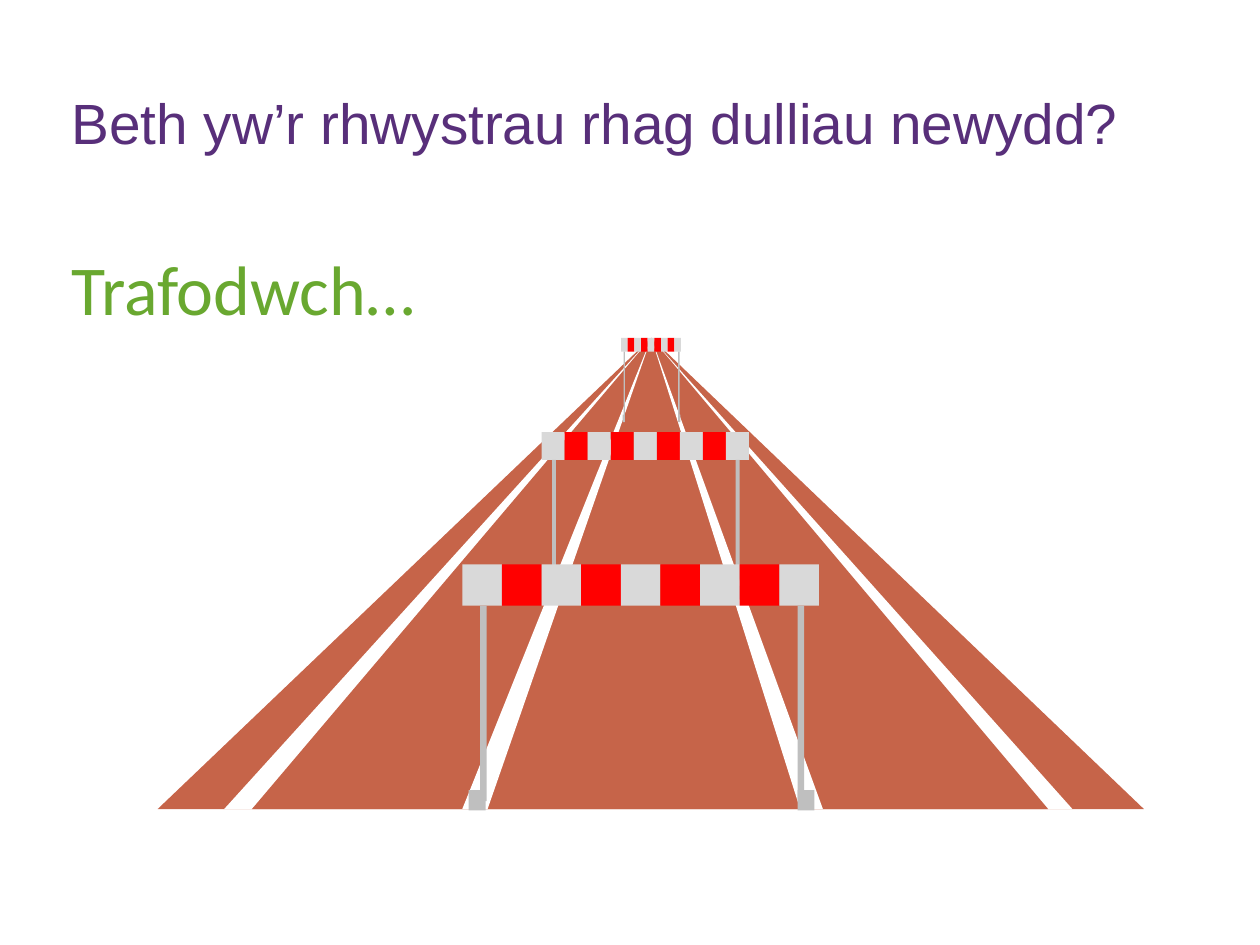
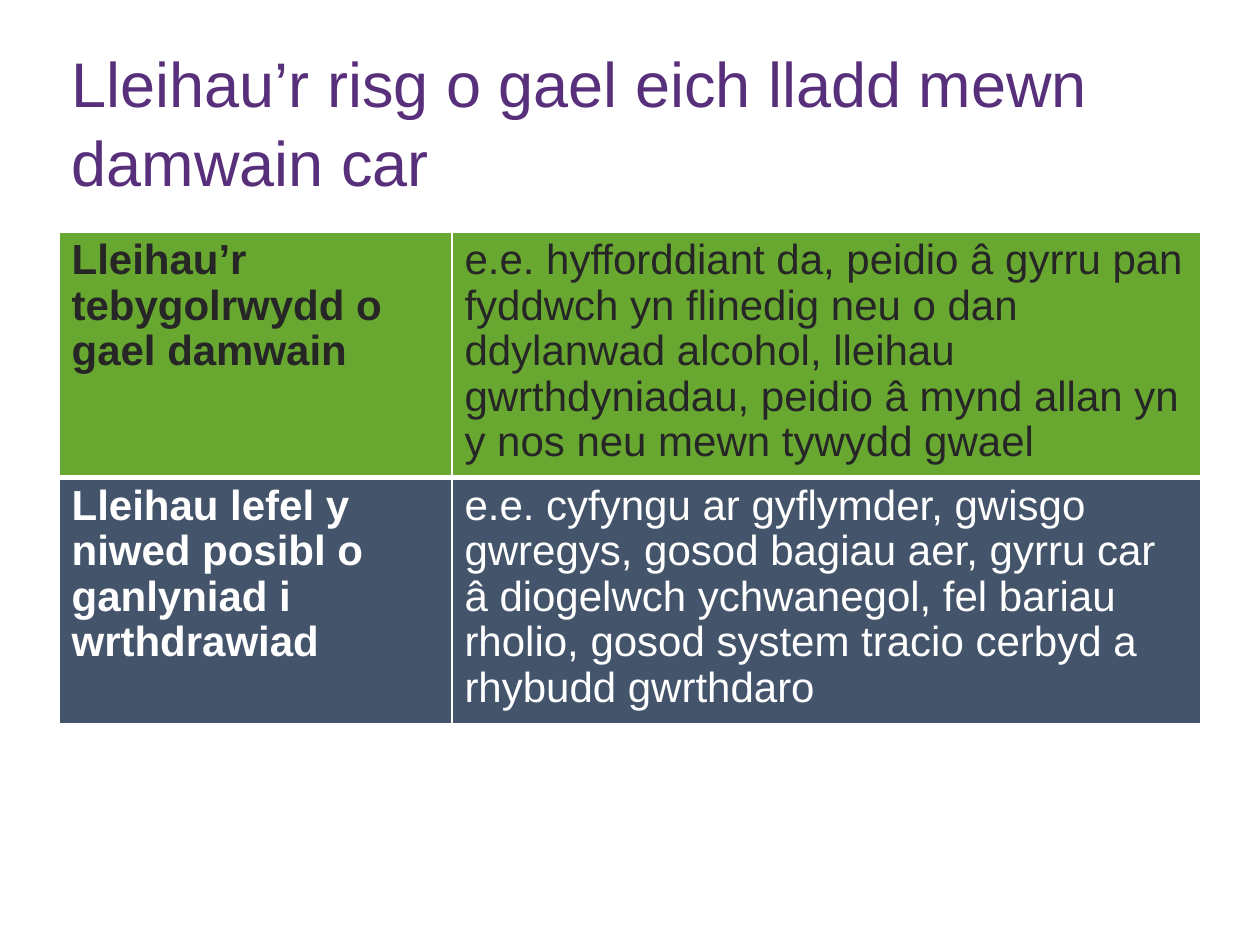
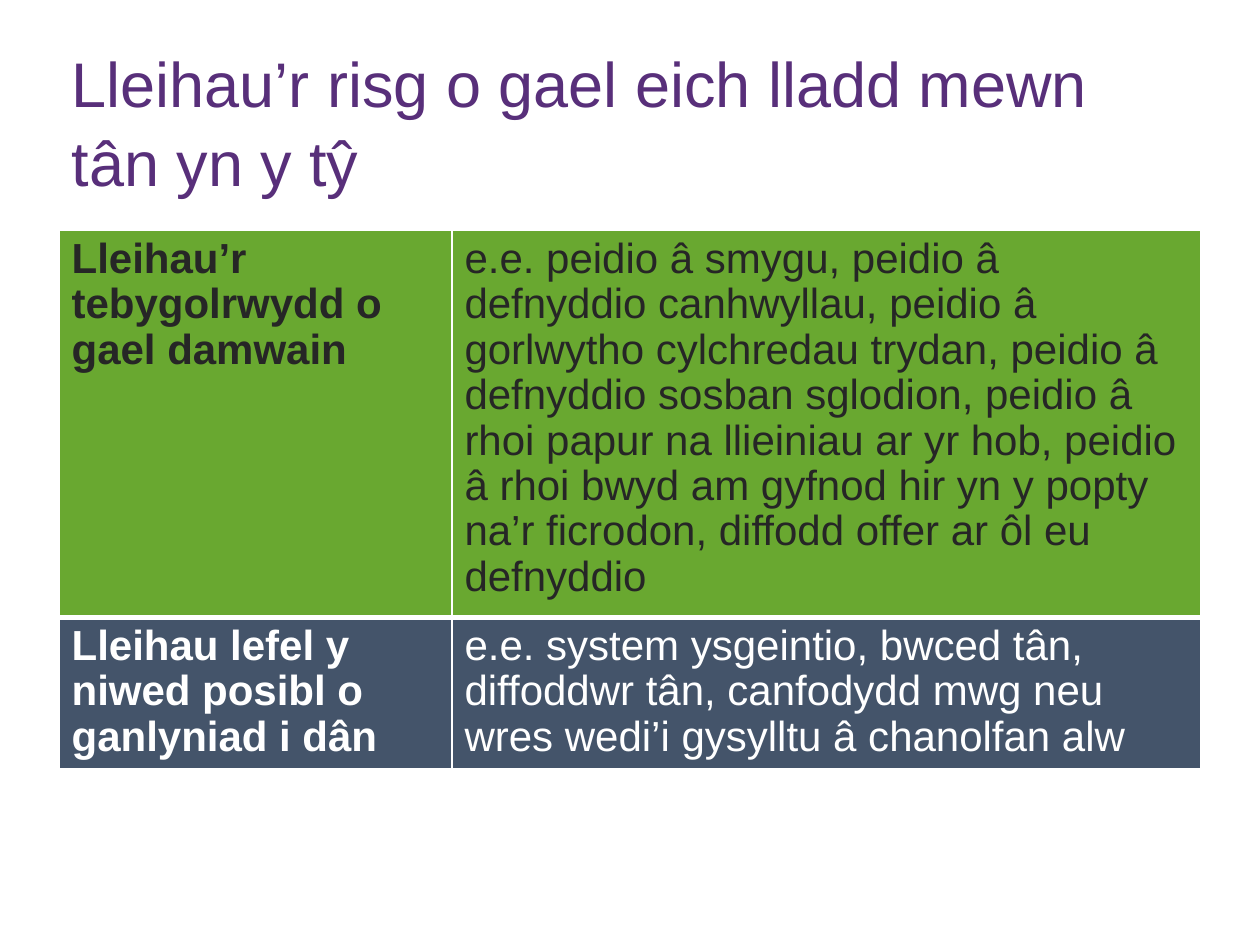
from dataclasses import dataclass

from lxml.etree import SubElement
from pptx import Presentation
from pptx.dml.color import RGBColor
from pptx.enum.shapes import MSO_SHAPE
from pptx.enum.text import MSO_ANCHOR, MSO_AUTO_SIZE, PP_ALIGN
from pptx.oxml.ns import qn
from pptx.shapes.group import GroupShape
from pptx.slide import Slide
from pptx.table import _Cell as Cell
from pptx.text.text import _Paragraph as Paragraph
from pptx.util import Cm, Pt

COLOURS = {
    "title": "582F7A",
    "green": "69A830",
    "slate": "44546A",
    "dark": "262626",
    "white": "FFFFFF",
    "track": "C66449",
    "board_grey": "D9D9D9",
    "board_red": "FF0000",
    "steel": "BFBFBF",
}
MARGIN, CONTENT_WIDTH = Cm(1.19), Cm(23.01)
TITLE_ONLY = 5

TRACK_APEX = (13.13, 6.81)
TRACK_BASE = 16.31
STRIPES = 9


@dataclass
class Wedge:
    """A triangle from the vanishing point to the near edge of the track, in cm."""
    left: float
    right: float
    colour: str


@dataclass
class Hurdle:
    """Sizes in cm; sizes of parts are (width, height)."""
    left: float
    top: float
    board: tuple[float, float]
    post_lefts: tuple[float, float]
    post: tuple[float, float]
    foot_lefts: tuple[float, ...]
    foot_top: float
    foot: tuple[float, float]


@dataclass
class Measure:
    """One table row: an aim and examples of how to reach it."""
    aim: str
    examples: str
    height: float
    fill: str
    ink: str
    top_border: float
    bottom_border: float


@dataclass
class RiskSlide:
    title: str
    table_top: float
    measures: list[Measure]


WEDGES = [
    Wedge(3.18, 23.06, "track"),
    Wedge(4.52, 21.62, "white"),
    Wedge(5.08, 21.13, "track"),
    Wedge(9.32, 9.83, "white"),
    Wedge(16.13, 16.59, "white"),
]

HURDLES = [
    Hurdle(10.92, 8.71, (4.18, 0.56), (11.13, 14.83), (0.08, 2.69),
           (14.86,), 11.81, (0.2, 0.28)),
    Hurdle(12.52, 6.81, (1.21, 0.28), (12.57, 13.67), (0.03, 1.32),
           (12.55, 13.67), 8.36, (0.05, 0.15)),
    Hurdle(9.32, 11.38, (7.19, 0.83), (9.68, 16.08), (0.13, 3.94),
           (9.45, 16.08), 15.93, (0.34, 0.41)),
]


def likelihood(examples: str, height: float) -> Measure:
    return Measure("Lleihau’r tebygolrwydd o gael damwain", examples, height,
                   "green", "dark", 1, 3)


def harm(cause: str, examples: str, height: float) -> Measure:
    return Measure(f"Lleihau lefel y niwed posibl o ganlyniad i {cause}", examples,
                   height, "slate", "white", 3, 1)


RISK_SLIDES = [
    RiskSlide("Lleihau’r risg o gael eich lladd mewn damwain car", 4.68, [
        likelihood("e.e. hyfforddiant da, peidio â gyrru pan fyddwch yn flinedig neu "
                   "o dan ddylanwad alcohol, lleihau gwrthdyniadau, peidio â mynd "
                   "allan yn y nos neu mewn tywydd gwael", 4.95),
        harm("wrthdrawiad",
             "e.e. cyfyngu ar gyflymder, gwisgo gwregys, gosod bagiau aer, gyrru car "
             "â diogelwch ychwanegol, fel bariau rholio, gosod system tracio cerbyd "
             "a rhybudd gwrthdaro", 4.95),
    ]),
    RiskSlide("Lleihau’r risg o gael eich lladd mewn tân yn y tŷ", 4.65, [
        likelihood("e.e. peidio â smygu, peidio â defnyddio canhwyllau, peidio â "
                   "gorlwytho cylchredau trydan, peidio â defnyddio sosban sglodion, "
                   "peidio â rhoi papur na llieiniau ar yr hob, peidio â rhoi bwyd am "
                   "gyfnod hir yn y popty na’r ficrodon, diffodd offer ar ôl eu "
                   "defnyddio", 7.8),
        harm("dân",
             "e.e. system ysgeintio, bwced tân, diffoddwr tân, canfodydd mwg neu "
             "wres wedi’i gysylltu â chanolfan alw", 3.05),
    ]),
]


def rgb(name: str) -> RGBColor:
    return RGBColor.from_string(COLOURS[name])


def apply(target, values: dict) -> None:
    for attribute, value in values.items():
        setattr(target, attribute, value)


def format_text(paragraph: Paragraph, size: float, colour: str, font: str = "Arial",
                bold: bool = False, spacing: float = 1.0) -> None:
    apply(paragraph, {"alignment": PP_ALIGN.LEFT, "line_spacing": spacing})
    apply(paragraph.font, {"name": font, "size": Pt(size), "bold": bold})
    paragraph.font.color.rgb = rgb(colour)


def paint(shape, colour: str) -> None:
    shape.fill.solid()
    shape.fill.fore_color.rgb = rgb(colour)
    shape.line.fill.background()
    shape.shadow.inherit = False


def add_titled_slide(deck, title: str, size: float = 36) -> Slide:
    slide = deck.slides.add_slide(deck.slide_layouts[TITLE_ONLY])
    heading = slide.shapes.title
    apply(heading, {"left": MARGIN, "top": Cm(1.02),
                    "width": CONTENT_WIDTH, "height": Cm(2.79)})
    frame = heading.text_frame
    frame.text = title
    apply(frame, {"auto_size": MSO_AUTO_SIZE.NONE, "word_wrap": True,
                  "vertical_anchor": MSO_ANCHOR.MIDDLE})
    format_text(frame.paragraphs[0], size, "title", spacing=1.05)
    return slide


def add_block(group: GroupShape, left: float, top: float,
              size: tuple[float, float], colour: str) -> None:
    width, height = size
    paint(group.shapes.add_shape(MSO_SHAPE.RECTANGLE, Cm(left), Cm(top),
                                 Cm(width), Cm(height)), colour)


def add_track(slide: Slide) -> None:
    track = slide.shapes.add_group_shape()
    apex = tuple(map(Cm, TRACK_APEX))
    for wedge in WEDGES:
        outline = track.shapes.build_freeform(*apex)
        outline.add_line_segments([(Cm(wedge.right), Cm(TRACK_BASE)),
                                   (Cm(wedge.left), Cm(TRACK_BASE))], close=True)
        paint(outline.convert_to_shape(), wedge.colour)


def add_hurdle(slide: Slide, hurdle: Hurdle) -> None:
    group = slide.shapes.add_group_shape()
    board_width, board_height = hurdle.board
    stripe = board_width / STRIPES
    for index in range(STRIPES):
        add_block(group, hurdle.left + index * stripe, hurdle.top,
                  (stripe, board_height), "board_red" if index % 2 else "board_grey")
    for left in hurdle.post_lefts:
        add_block(group, left, hurdle.top + board_height, hurdle.post, "steel")
    for left in hurdle.foot_lefts:
        add_block(group, left, hurdle.foot_top, hurdle.foot, "steel")


def add_obstacles_slide(deck) -> None:
    slide = add_titled_slide(deck, "Beth yw’r rhwystrau rhag dulliau newydd?", 32.4)
    add_track(slide)
    for hurdle in HURDLES:
        add_hurdle(slide, hurdle)
    prompt = slide.shapes.add_textbox(MARGIN, Cm(4.83), Cm(7.52), Cm(1.96)).text_frame
    prompt.text = "Trafodwch…"
    apply(prompt, {"word_wrap": False, "auto_size": MSO_AUTO_SIZE.SHAPE_TO_FIT_TEXT})
    format_text(prompt.paragraphs[0], 40, "green", font="Calibri")


def set_borders(cell: Cell, measure: Measure) -> None:
    widths = {"a:lnL": 1, "a:lnR": 1, "a:lnT": measure.top_border,
              "a:lnB": measure.bottom_border}
    properties = cell._tc.get_or_add_tcPr()
    for side, width in widths.items():
        line = SubElement(properties, qn(side), w=str(Pt(width)))
        fill = SubElement(line, qn("a:solidFill"))
        SubElement(fill, qn("a:srgbClr"), val=COLOURS["white"])


def fill_cell(cell: Cell, text: str, measure: Measure, bold: bool) -> None:
    set_borders(cell, measure)
    cell.fill.solid()
    cell.fill.fore_color.rgb = rgb(measure.fill)
    cell.text = text
    format_text(cell.text_frame.paragraphs[0], 24, measure.ink, bold=bold, spacing=0.97)


def add_risk_slide(deck, risk: RiskSlide) -> None:
    slide = add_titled_slide(deck, risk.title)
    height = Cm(sum(measure.height for measure in risk.measures))
    table = slide.shapes.add_table(len(risk.measures), 2, MARGIN, Cm(risk.table_top),
                                   CONTENT_WIDTH, height).table
    apply(table, {"first_row": False, "horz_banding": False})
    for column, width in zip(table.columns, (7.92, 15.09)):
        column.width = Cm(width)
    for row, measure in zip(table.rows, risk.measures):
        row.height = Cm(measure.height)
        aim, examples = row.cells
        fill_cell(aim, measure.aim, measure, bold=True)
        fill_cell(examples, measure.examples, measure, bold=False)


def main() -> None:
    deck = Presentation()
    apply(deck, {"slide_width": Cm(25.4), "slide_height": Cm(19.05)})
    add_obstacles_slide(deck)
    for risk in RISK_SLIDES:
        add_risk_slide(deck, risk)
    deck.save("out.pptx")


if __name__ == "__main__":
    main()
